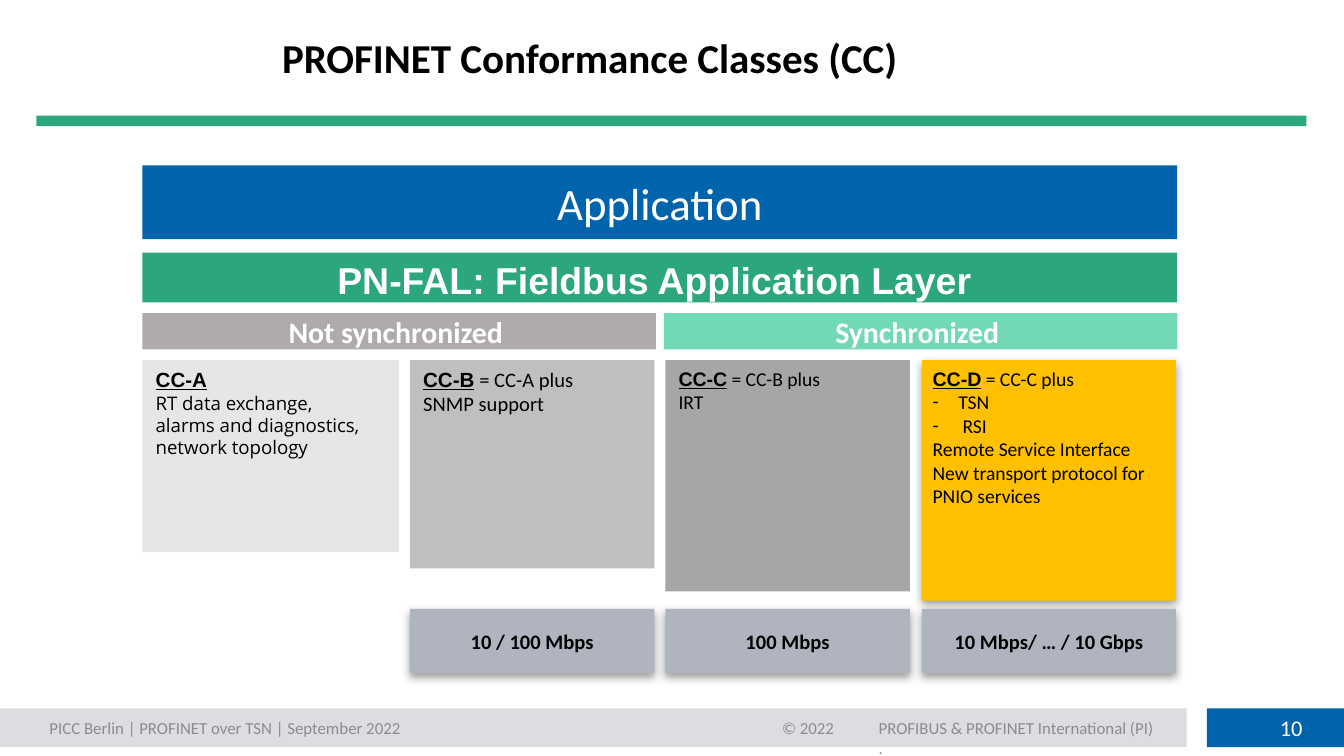
"""Build the slide on PROFINET conformance classes."""
from lxml import etree
from pptx import Presentation
from pptx.dml.color import RGBColor
from pptx.enum.shapes import MSO_SHAPE
from pptx.enum.text import MSO_ANCHOR, PP_ALIGN
from pptx.oxml import parse_xml
from pptx.oxml.ns import nsdecls, qn
from pptx.util import Inches, Pt

RECTANGLE = MSO_SHAPE.RECTANGLE
TOP, MIDDLE = MSO_ANCHOR.TOP, MSO_ANCHOR.MIDDLE
LEFT, CENTER, RIGHT = PP_ALIGN.LEFT, PP_ALIGN.CENTER, PP_ALIGN.RIGHT

BLACK = RGBColor(0x00, 0x00, 0x00)
WHITE = RGBColor(0xFF, 0xFF, 0xFF)
BLUE = RGBColor(0x00, 0x64, 0xAD)
GREEN = RGBColor(0x2C, 0xA6, 0x7B)
MINT = RGBColor(0x71, 0xD9, 0xB4)
WARM_GRAY = RGBColor(0xAF, 0xAB, 0xAB)
PALE_GRAY = RGBColor(0xE4, 0xE6, 0xE8)
LIGHT_GRAY = RGBColor(0xBF, 0xBF, 0xBF)
MID_GRAY = RGBColor(0xA6, 0xA6, 0xA6)
AMBER = RGBColor(0xFF, 0xC0, 0x00)
SPEED_GRAY = RGBColor(0xAF, 0xB4, 0xBE)
FOOTER_GRAY = RGBColor(0xDC, 0xDD, 0xE0)
FOOTER_TEXT = RGBColor(0x8C, 0x8C, 0x8C)

COLUMNS = [(1.06, 1.91), (3.05, 1.82), (4.95, 1.82), (6.86, 1.89)]
FULL_WIDTH, LEFT_HALF, RIGHT_HALF = (1.06, 7.7), (1.06, 3.82), (4.94, 3.82)
APPLICATION_ROW, LAYER_ROW, SYNC_ROW = (1.23, 0.55), (1.88, 0.37), (2.33, 0.27)
CLASS_TOP, SPEED_ROW, FOOTER_ROW = 2.68, (4.53, 0.48), (5.27, 0.29)
PADDING = (0.1, 0.05, 0.1, 0.05)
NO_PADDING = (0, 0, 0, 0)

presentation = Presentation()
presentation.slide_width = Inches(10)
presentation.slide_height = presentation.slide_width * 9 // 16
slide = presentation.slides.add_slide(presentation.slide_layouts[6])


def add_block(column, row, color, shadow=False):
    lengths = [Inches(value) for value in (column[0], row[0], column[1], row[1])]
    if color is None:
        return slide.shapes.add_textbox(*lengths)
    shape = slide.shapes.add_shape(RECTANGLE, *lengths)
    shape.shadow.inherit = False
    shape.fill.solid()
    shape.fill.fore_color.rgb = color
    shape.line.fill.background()
    if shadow:
        effects = shape._element.spPr.find(qn("a:effectLst"))
        effects.append(parse_xml(
            f'<a:outerShdw {nsdecls("a")} blurRad="{Pt(5)}" dist="{Pt(2)}" dir="5400000" '
            'algn="t" rotWithShape="0"><a:srgbClr val="000000"><a:alpha val="40000"/>'
            '</a:srgbClr></a:outerShdw>'))
    return shape


def write(shape, text, size, color=BLACK, font="Calibri", bold=False, align=LEFT,
          anchor=MIDDLE, padding=PADDING, spacing=None, lead="", lead_size=11, bullets=()):
    frame = shape.text_frame
    frame.word_wrap = True
    frame.vertical_anchor = anchor
    frame.margin_left, frame.margin_top, frame.margin_right, frame.margin_bottom = map(Inches, padding)
    for index, line in enumerate(text.split("\n")):
        paragraph = frame.add_paragraph() if index else frame.paragraphs[0]
        paragraph.alignment = align
        if spacing:
            paragraph.line_spacing = spacing
        if index in bullets:
            properties = paragraph._p.get_or_add_pPr()
            properties.set("marL", str(Inches(0.19)))
            properties.set("indent", str(Inches(-0.19)))
            etree.SubElement(properties, qn("a:buFont")).set("typeface", font)
            etree.SubElement(properties, qn("a:buChar")).set("char", "-")
        if lead and index == 0:
            run = paragraph.add_run()
            run.text = lead
            run.font.name, run.font.size = "Arial", Pt(lead_size)
            run.font.bold = run.font.underline = True
            run.font.color.rgb = color
        if line:
            run = paragraph.add_run()
            run.text = line
            run.font.name, run.font.size = font, Pt(size)
            run.font.bold = bold
            run.font.color.rgb = color


add_block((0.27, 9.45), (0.86, 0.08), GREEN)
title = add_block((2, 7.72), (0.11, 0.68), None)
write(title, "PROFINET Conformance Classes (CC)", 22, bold=True, spacing=0.9)

application = add_block(FULL_WIDTH, APPLICATION_ROW, BLUE)
write(application, "Application", 24, color=WHITE, align=CENTER)
layer = add_block(FULL_WIDTH, LAYER_ROW, GREEN)
write(layer, "PN-FAL: Fieldbus Application Layer ", 20, color=WHITE, font="Arial", bold=True,
      align=CENTER, padding=(0.01,) * 4, spacing=1.1)
for half, color, label in ((LEFT_HALF, WARM_GRAY, "Not synchronized "),
                           (RIGHT_HALF, MINT, "Synchronized ")):
    write(add_block(half, SYNC_ROW, color), label, 16, color=WHITE, bold=True, align=CENTER)

classes = [
    ("CC-A", "\nRT data exchange,\nalarms and diagnostics,\nnetwork topology", 1.43, PALE_GRAY,
     dict(size=10, font="Open Sans")),
    ("CC-B", " = CC-A plus\nSNMP support", 1.55, LIGHT_GRAY, dict(size=11)),
    ("CC-C", " = CC-B plus\nIRT", 1.72, MID_GRAY, dict(size=10.5, lead_size=10.5)),
    ("CC-D", " = CC-C plus\nTSN\n RSI\nRemote Service Interface\n"
     "New transport protocol for\nPNIO services", 1.79, AMBER,
     dict(size=10.5, lead_size=10.5, bullets=(1, 2), padding=(0.08, 0.05, 0.1, 0.05))),
]
for column, (name, text, height, color, text_format) in zip(COLUMNS, classes):
    block = add_block(column, (CLASS_TOP, height), color, shadow=name == "CC-D")
    write(block, text, lead=name, anchor=TOP, **text_format)

for column, speed in zip(COLUMNS[1:], ("10 / 100 Mbps", "100 Mbps", "10 Mbps/ … / 10 Gbps")):
    write(add_block(column, SPEED_ROW, SPEED_GRAY, shadow=True), speed, 11, bold=True,
          align=CENTER, padding=NO_PADDING)

add_block((0, 8.83), FOOTER_ROW, FOOTER_GRAY)
add_block((8.98, 1.02), FOOTER_ROW, BLUE)
event = add_block((0.27, 3.14), FOOTER_ROW, None)
write(event, "PICC Berlin | PROFINET over TSN | September 2022", 9, color=FOOTER_TEXT)
copyright_year = add_block((5.82, 0.44), FOOTER_ROW, None)
write(copyright_year, "© 2022", 9, color=FOOTER_TEXT, padding=NO_PADDING)
organization = add_block((6.44, 2.26), (5.29, 0.33), None)
write(organization, "PROFIBUS & PROFINET International (PI)\n.", 9, color=FOOTER_TEXT, anchor=TOP)
page_number = add_block((9.2, 0.59), FOOTER_ROW, None)
write(page_number, "10", 12, color=WHITE, align=RIGHT)

presentation.save("out.pptx")
